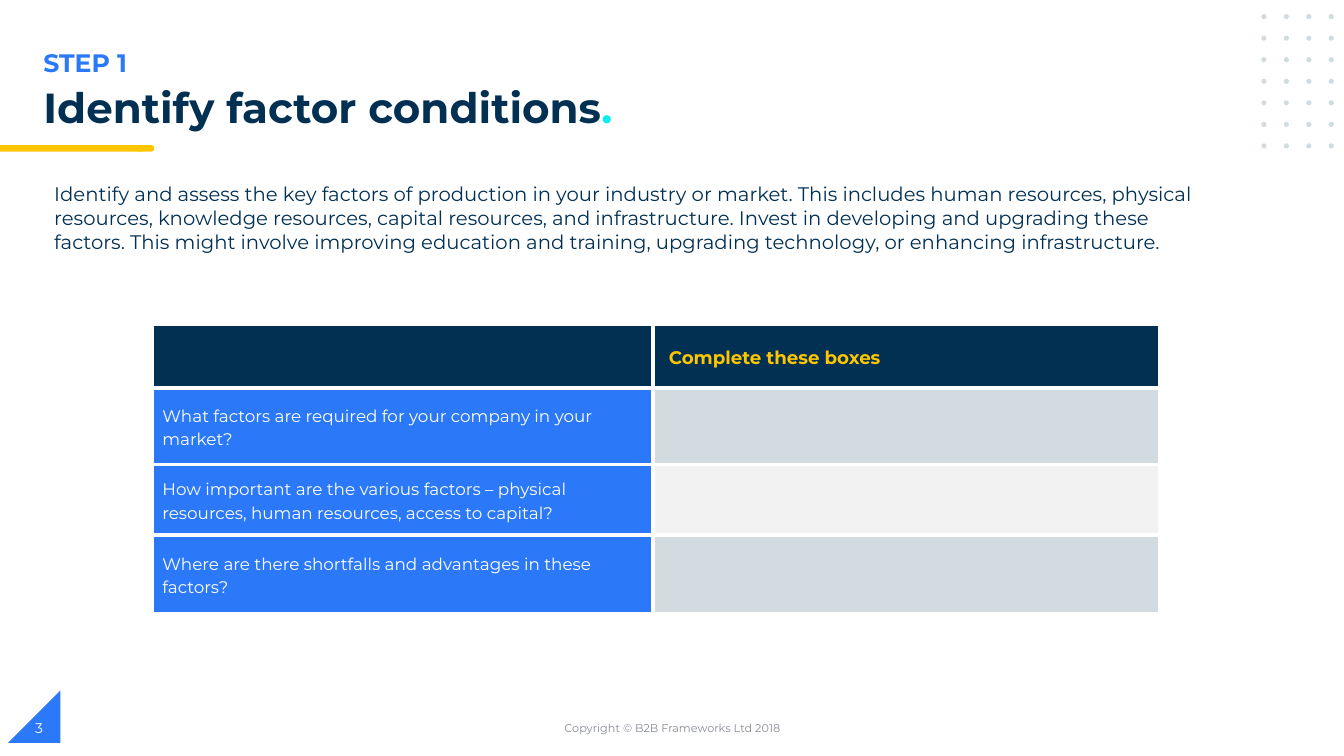
"""Build the step 1 slide: factor conditions and a worksheet table."""
import dataclasses
import itertools
import typing

import lxml.etree
import pptx
import pptx.dml.color
import pptx.enum.shapes
import pptx.enum.text
import pptx.oxml.ns
import pptx.util

SLIDE_WIDTH = pptx.util.Inches(13.33)
SLIDE_HEIGHT = pptx.util.Inches(7.5)
GRID = 100
SHAPES = pptx.enum.shapes.MSO_SHAPE
ALIGN = pptx.enum.text.PP_ALIGN
ANCHOR = pptx.enum.text.MSO_ANCHOR


@dataclasses.dataclass(frozen=True)
class Theme:
    font: str = "Montserrat"
    spacer_font: str = "Arial"
    navy: str = "023053"
    blue: str = "2B79F8"
    yellow: str = "FFC600"
    cyan: str = "0EECEC"
    mist: str = "D1DBE0"
    pale: str = "F2F2F2"
    grey: str = "888C97"
    white: str = "FFFFFF"
    black: str = "000000"
    title: int = 30
    step: int = 18
    body: int = 14
    header: int = 13
    question: int = 12
    page: int = 10
    copyright: int = 8
    border: int = 3


THEME = Theme()


class Box(typing.NamedTuple):
    left: float
    top: float
    width: float
    height: float


class Words(typing.NamedTuple):
    text: str
    size: int
    color: str
    bold: bool = False
    font: str = THEME.font


class Mark(typing.NamedTuple):
    kind: typing.Any
    box: Box
    color: str
    flipped: bool = False


class Label(typing.NamedTuple):
    box: Box
    words: Words
    anchor: typing.Any = ANCHOR.TOP
    align: typing.Any = ALIGN.LEFT


class Cell(typing.NamedTuple):
    fill: str
    words: tuple[Words, ...] = ()


def columns(count: float) -> int:
    return round(SLIDE_WIDTH * count / GRID)


def rows(count: float) -> int:
    return round(SLIDE_HEIGHT * count / GRID)


def place(box: Box) -> tuple[int, int, int, int]:
    return columns(box.left), rows(box.top), columns(box.width), rows(box.height)


def rgb(color: str) -> pptx.dml.color.RGBColor:
    return pptx.dml.color.RGBColor.from_string(color)


def write(paragraph, words: typing.Iterable[Words]) -> None:
    for piece in words:
        run = paragraph.add_run()
        run.text = piece.text
        run.font.name = piece.font
        run.font.size = pptx.util.Pt(piece.size)
        run.font.bold = piece.bold
        run.font.color.rgb = rgb(piece.color)


def draw_mark(slide, mark: Mark) -> None:
    shape = slide.shapes.add_shape(mark.kind, *place(mark.box))
    shape.shadow.inherit = False
    shape.fill.solid()
    shape.fill.fore_color.rgb = rgb(mark.color)
    shape.line.fill.background()
    if mark.flipped:
        shape._element.spPr.find(pptx.oxml.ns.qn("a:xfrm")).set("flipH", "1")


def draw_label(slide, label: Label) -> None:
    frame = slide.shapes.add_textbox(*place(label.box)).text_frame
    frame.word_wrap = True
    frame.vertical_anchor = label.anchor
    frame.paragraphs[0].alignment = label.align
    write(frame.paragraphs[0], [label.words])


def draw_title(slide, box: Box, words: typing.Iterable[Words]) -> None:
    title = slide.shapes.title
    title.left, title.top, title.width, title.height = place(box)
    frame = title.text_frame
    frame.word_wrap = True
    frame.auto_size = pptx.enum.text.MSO_AUTO_SIZE.NONE
    frame.vertical_anchor = ANCHOR.TOP
    paragraph = frame.paragraphs[0]
    paragraph.alignment = ALIGN.LEFT
    paragraph.line_spacing = 0.9
    write(paragraph, words)


def border(cell) -> None:
    qn = pptx.oxml.ns.qn
    properties = cell._tc.get_or_add_tcPr()
    for side in ("a:lnL", "a:lnR", "a:lnT", "a:lnB"):
        width = str(pptx.util.Pt(THEME.border))
        edge = lxml.etree.SubElement(properties, qn(side), w=width)
        fill = lxml.etree.SubElement(edge, qn("a:solidFill"))
        lxml.etree.SubElement(fill, qn("a:srgbClr"), val=THEME.white)


def draw_worksheet(slide, left: float, top: float, widths: list[float],
                   heights: list[float], content: list[list[Cell]]) -> None:
    box = Box(left, top, sum(widths), sum(heights))
    table = slide.shapes.add_table(len(heights), len(widths), *place(box)).table
    for column, width in zip(table.columns, widths):
        column.width = columns(width)
    for row, height in zip(table.rows, heights):
        row.height = rows(height)
    for cell, entry in zip(table.iter_cells(), itertools.chain.from_iterable(content)):
        border(cell)
        cell.fill.solid()
        cell.fill.fore_color.rgb = rgb(entry.fill)
        cell.vertical_anchor = ANCHOR.MIDDLE
        cell.margin_top = cell.margin_bottom = 0
        paragraph = cell.text_frame.paragraphs[0]
        paragraph.line_spacing = 1.15
        write(paragraph, entry.words)


MARKS = [
    Mark(SHAPES.RIGHT_TRIANGLE, Box(0.6, 91.33, 3.9, 6.93), THEME.blue, True),
    Mark(SHAPES.FLOWCHART_TERMINATOR, Box(10.05, 19.2, 1.43, 0.85), THEME.yellow),
    Mark(SHAPES.RECTANGLE, Box(0, 19.2, 10.58, 0.85), THEME.yellow),
] + [
    Mark(SHAPES.OVAL, Box(93.85 + 1.67 * column, 1.87 + 2.85 * row, 0.38, 0.67), THEME.mist)
    for row, column in itertools.product(range(7), range(4))
]

LABELS = [
    Label(Box(2.48, 5.6, 50.19, 5.33), Words("STEP 1", THEME.step, THEME.blue, True)),
    Label(Box(33.16, 93.6, 33.76, 5.33),
          Words("Copyright © B2B Frameworks Ltd 2018", THEME.copyright, THEME.grey),
          ANCHOR.MIDDLE, ALIGN.CENTER),
    Label(Box(1.88, 93.6, 22.5, 5.33), Words("3", THEME.page, THEME.white), ANCHOR.MIDDLE),
    Label(Box(3.3, 23.47, 88.67, 10.8), Words(
        "Identify and assess the key factors of production in your industry or market. "
        "This includes human resources, physical resources, knowledge resources, capital "
        "resources, and infrastructure. Invest in developing and upgrading these factors. "
        "This might involve improving education and training, upgrading technology, or "
        "enhancing infrastructure.", THEME.body, THEME.navy)),
]

TITLE = [Words("Identify factor conditions", THEME.title, THEME.navy, True),
         Words(".", THEME.title, THEME.cyan, True)]

QUESTIONS = [
    ("What factors are required for your company in your market?", THEME.mist),
    ("How important are the various factors – physical resources, human resources, "
     "access to capital?", THEME.pale),
    ("Where are there shortfalls and advantages in these factors?", THEME.mist),
]

HEADER = [Cell(THEME.navy), Cell(THEME.navy, (
    Words(" ", THEME.body, THEME.black, font=THEME.spacer_font),
    Words("Complete these boxes", THEME.header, THEME.yellow, True)))]

WORKSHEET = [HEADER] + [
    [Cell(THEME.blue, (Words(question, THEME.question, THEME.white),)), Cell(answer_fill)]
    for question, answer_fill in QUESTIONS
]


def main() -> None:
    deck = pptx.Presentation()
    deck.slide_width, deck.slide_height = SLIDE_WIDTH, SLIDE_HEIGHT
    slide = deck.slides.add_slide(deck.slide_layouts.get_by_name("Title Only"))
    for mark in MARKS:
        draw_mark(slide, mark)
    for label in LABELS:
        draw_label(slide, label)
    draw_title(slide, Box(2.48, 10.93, 58.2, 5.33), TITLE)
    draw_worksheet(slide, 11.33, 42.93, [37.28, 37.66], [8.4, 10.13, 9.33, 10.4], WORKSHEET)
    deck.save("out.pptx")


if __name__ == "__main__":
    main()
